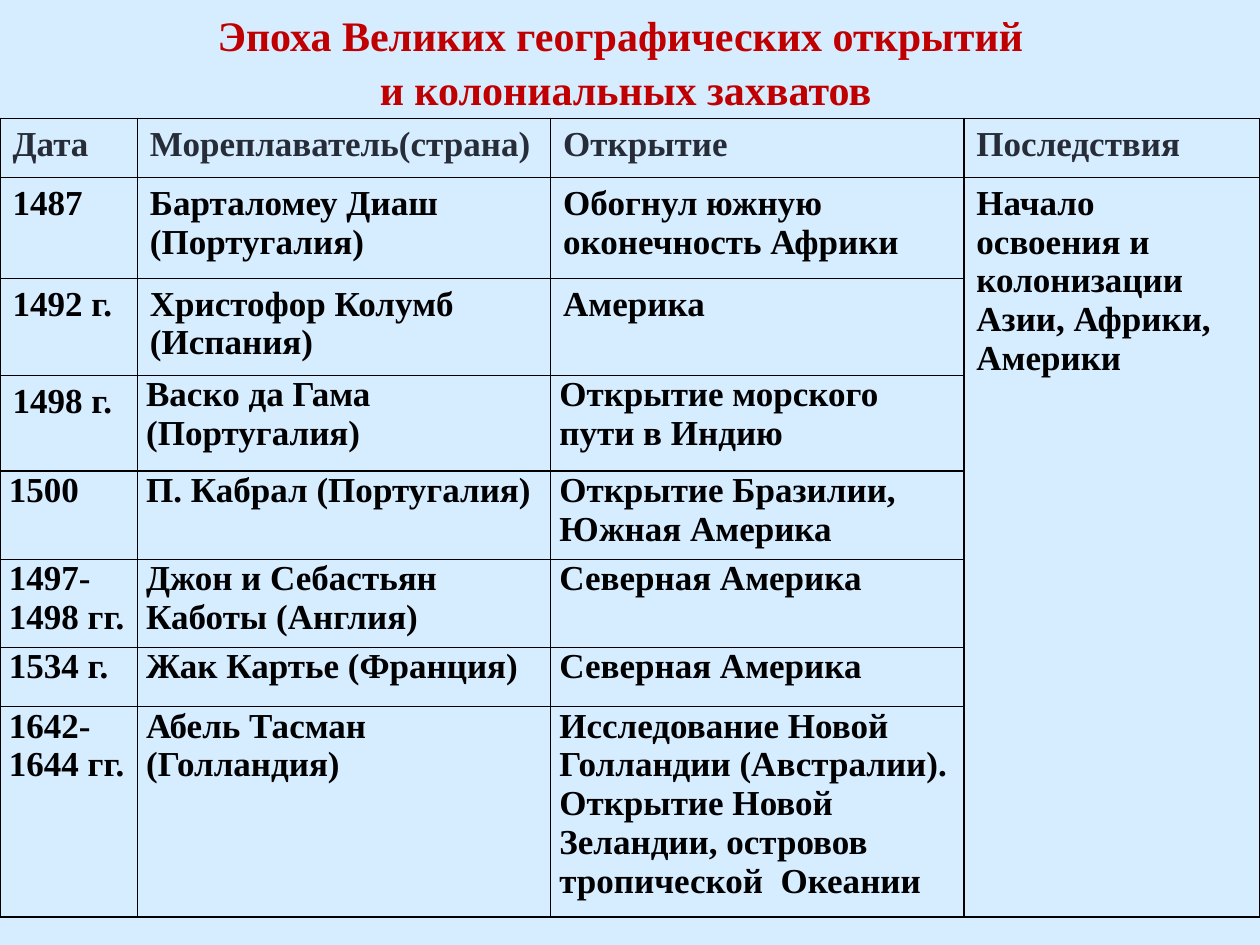
from lxml import etree
from pptx import Presentation
from pptx import util as u
from pptx.dml.color import RGBColor
from pptx.enum import text
from pptx.oxml import ns

COLORS = {"sky": "D6ECFF", "title": "C00000", "header": "272D38", "body": "000000"}
COLUMN_SHARES = [0.109, 0.328, 0.328, 0.235]
ROW_INCHES = [0.47, 0.8, 0.77, 0.76, 0.7, 0.7, 0.47, 1.67]
TABLE_TOP = 0.94
ROOMY, TIGHT = (0.1, 0.05), (0.07, 0)  # side and top margins of a cell

HEADINGS = ["Дата", "Мореплаватель(страна)", "Открытие", "Последствия"]
VOYAGES = [
    ("1487", "Барталомеу Диаш\n(Португалия)", "Обогнул южную оконечность Африки"),
    ("1492 г.", "Христофор Колумб\n(Испания)", "Америка"),
    ("1498 г.", "Васко да Гама\n(Португалия)", "Открытие морского пути в Индию"),
    ("1500", "П. Кабрал (Португалия)", "Открытие Бразилии, Южная Америка"),
    ("1497-1498 гг.", "Джон и Себастьян Каботы (Англия)", "Северная Америка"),
    ("1534 г.", "Жак Картье (Франция)", "Северная Америка"),
    ("1642-1644 гг.", "Абель Тасман\n(Голландия)",
     "Исследование Новой Голландии (Австралии). Открытие Новой Зеландии, "
     "островов тропической  Океании"),
]
CONSEQUENCES = "Начало освоения и колонизации Азии, Африки, Америки"


def write(frame, words, size=20, color="body", align=None, spacing=None):
    """Fill a text frame, one paragraph per line of words."""
    frame.word_wrap = True
    for index, line in enumerate(words.split("\n")):
        para = frame.add_paragraph() if index else frame.paragraphs[0]
        para.alignment = align
        para.line_spacing = spacing
        span = para.add_run()
        span.text = line
        span.font.name = "Times New Roman"
        span.font.size = u.Pt(size)
        span.font.bold = True
        span.font.color.rgb = RGBColor.from_string(COLORS[color])


def outline(cell, color="body", width=1):
    """Draw the four borders of a cell; they must come before its fill."""
    properties = cell._tc.get_or_add_tcPr()
    for index, side in enumerate(("lnL", "lnR", "lnT", "lnB")):
        line = etree.Element(ns.qn(f"a:{side}"), w=str(u.Pt(width)))
        fill = etree.SubElement(line, ns.qn("a:solidFill"))
        etree.SubElement(fill, ns.qn("a:srgbClr"), val=COLORS[color])
        properties.insert(index, line)


class SlideBuilder:
    """Holds the deck, its current slide and the shared style."""

    def __init__(self, width, height):
        self.deck = Presentation()
        self.deck.slide_width = u.Inches(width)
        self.deck.slide_height = u.Inches(height)
        self.page = self.deck.slides.add_slide(self.deck.slide_layouts[6])
        background = self.page.background.fill
        background.solid()
        background.fore_color.rgb = RGBColor.from_string(COLORS["sky"])

    def across(self, share):
        return round(self.deck.slide_width * share)

    def title(self, words, left, width, height):
        box = self.page.shapes.add_textbox(
            self.across(left), 0, self.across(width), u.Inches(height))
        write(box.text_frame, words, size=24, color="title",
              align=text.PP_ALIGN.CENTER, spacing=1.07)

    def table(self, top, columns, rows):
        frame = self.page.shapes.add_table(
            len(rows), len(columns), 0, u.Inches(top),
            self.deck.slide_width, u.Inches(sum(rows)))
        grid = frame.table
        grid.first_row = grid.horz_banding = False
        for column, share in zip(grid.columns, columns):
            column.width = self.across(share)
        for row, height in zip(grid.rows, rows):
            row.height = u.Inches(height)
        for cell in grid.iter_cells():
            cell.fill.background()
            outline(cell)
        return grid

    def cell(self, grid, row, column, words, margins=ROOMY, color="body"):
        cell = grid.cell(row, column)
        side, top = margins
        cell.margin_left = cell.margin_right = u.Inches(side)
        cell.margin_top = cell.margin_bottom = u.Inches(top)
        write(cell.text_frame, words, color=color)


def main():
    builder = SlideBuilder(10, 7.5)
    grid = builder.table(TABLE_TOP, COLUMN_SHARES, ROW_INCHES)
    for column, heading in enumerate(HEADINGS):
        builder.cell(grid, 0, column, heading, color="header")
    for row, voyage in enumerate(VOYAGES, start=1):
        for column, words in enumerate(voyage):
            tight = row > 3 or (row == 3 and column > 0)
            builder.cell(grid, row, column, words, TIGHT if tight else ROOMY)
    grid.cell(1, 3).merge(grid.cell(len(VOYAGES), 3))
    builder.cell(grid, 1, 3, CONSEQUENCES)
    builder.title("Эпоха Великих географических открытий \nи колониальных захватов",
                  left=0.016, width=0.961, height=0.91)
    builder.deck.save("out.pptx")


if __name__ == "__main__":
    main()
